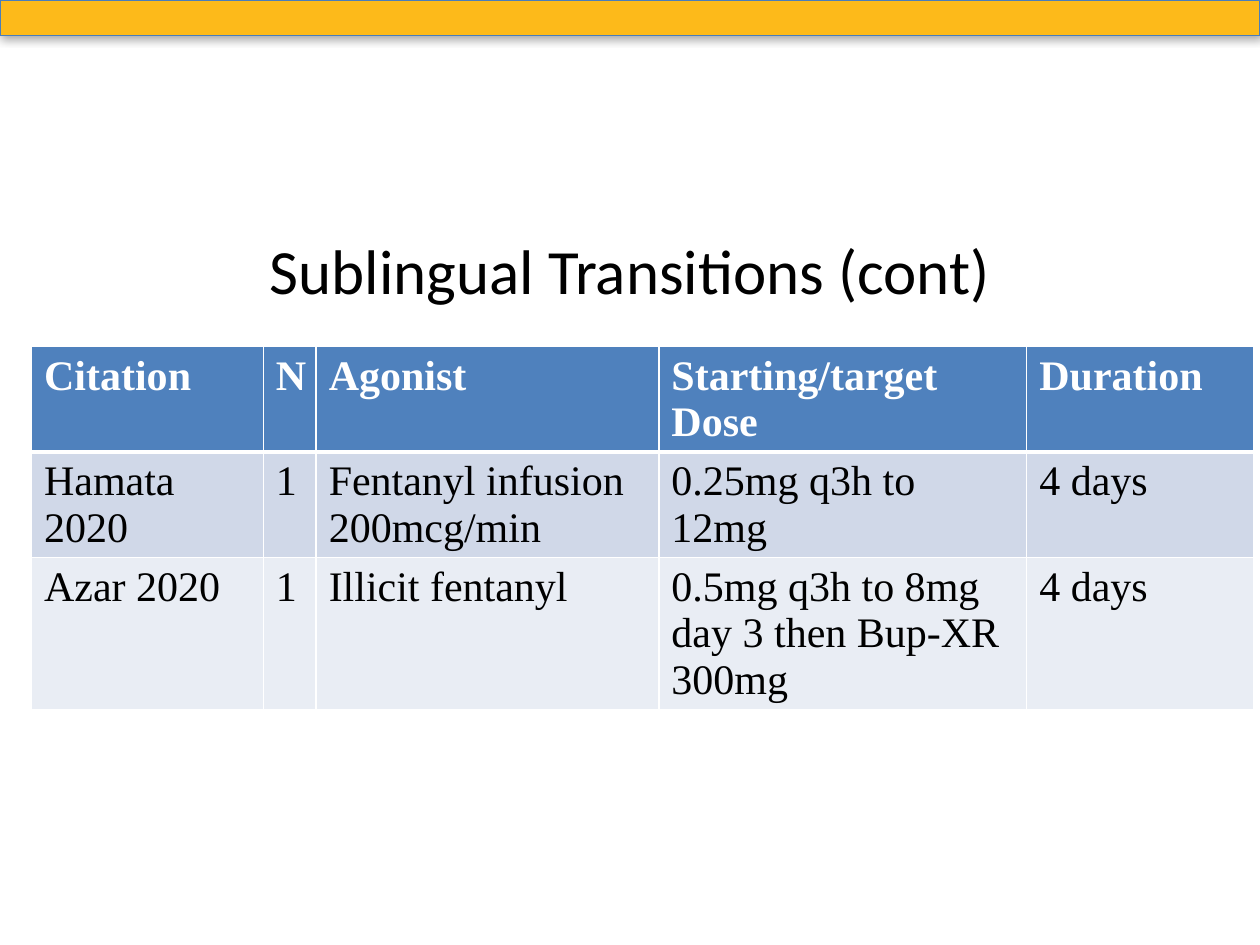
from dataclasses import dataclass

import pptx
import pptx.dml.color
import pptx.enum.shapes
import pptx.enum.text
import pptx.oxml
import pptx.oxml.ns
import pptx.util
from pptx.util import Inches


def rgb(value):
    return pptx.dml.color.RGBColor.from_string(value)


@dataclass(frozen=True)
class Theme:
    band: str = "FDBA1A"
    band_line: str = "4A7EBB"
    header: str = "4F81BD"
    rows: tuple = ("D0D8E8", "E9EDF4")
    light: str = "FFFFFF"
    dark: str = "000000"
    title_font: str = "Calibri"
    table_font: str = "Times New Roman"
    title_size: int = 36
    table_size: int = 24


THEME = Theme()
NAMESPACE = pptx.oxml.ns.nsdecls("a")

COLUMN_WIDTHS = (1.84, 0.42, 2.72, 2.92, 1.8)
ROW_HEIGHT = 0.41  # minimum; rows grow with their text
TABLE_ROWS = (
    ("Citation", "N", "Agonist", "Starting/target Dose", "Duration"),
    ("Hamata 2020", "1", "Fentanyl infusion 200mcg/min", "0.25mg q3h to 12mg", "4 days"),
    ("Azar 2020", "1", "Illicit fentanyl", "0.5mg q3h to 8mg day 3 then Bup-XR 300mg", "4 days"),
)


def style_text(para, font_name, size, color, bold=False):
    for span in para.runs:
        span.font.name = font_name
        span.font.size = pptx.util.Pt(size)
        span.font.color.rgb = rgb(color)
        span.font.bold = bold


def add_band(page, left, top, width, height):
    """Coloured strip with a soft shadow below it."""
    band = page.shapes.add_shape(
        pptx.enum.shapes.MSO_SHAPE.RECTANGLE, left, top, width, height)
    band.fill.solid()
    band.fill.fore_color.rgb = rgb(THEME.band)
    band.line.color.rgb = rgb(THEME.band_line)
    band.line.width = pptx.util.Pt(0.75)
    band.shadow.inherit = False
    effects = band._element.spPr.find(pptx.oxml.ns.qn("a:effectLst"))
    effects.append(pptx.oxml.parse_xml(
        f'<a:outerShdw {NAMESPACE} blurRad="{pptx.util.Pt(5)}" dist="{pptx.util.Pt(1.8)}" '
        f'dir="5400000" rotWithShape="0"><a:srgbClr val="{THEME.dark}">'
        '<a:alpha val="35000"/></a:srgbClr></a:outerShdw>'))


def add_title(page, text, left, top, width, height):
    box = page.shapes.add_textbox(left, top, width, height)
    frame = box.text_frame
    frame.word_wrap = True
    frame.vertical_anchor = pptx.enum.text.MSO_ANCHOR.MIDDLE
    frame.text = text
    para = frame.paragraphs[0]
    para.alignment = pptx.enum.text.PP_ALIGN.CENTER
    style_text(para, THEME.title_font, THEME.title_size, THEME.dark)


def add_borders(cell, bottom_width, top_width):
    properties = cell._tc.get_or_add_tcPr()
    widths = {"L": 1, "R": 1, "T": top_width, "B": bottom_width}
    for side, width in widths.items():
        properties.append(pptx.oxml.parse_xml(
            f'<a:ln{side} {NAMESPACE} w="{pptx.util.Pt(width)}"><a:solidFill>'
            f'<a:srgbClr val="{THEME.light}"/></a:solidFill></a:ln{side}>'))


def add_study_table(page, left, top, width, height):
    table = page.shapes.add_table(
        len(TABLE_ROWS), len(COLUMN_WIDTHS), left, top, width, height).table
    for column, column_width in zip(table.columns, COLUMN_WIDTHS):
        column.width = Inches(column_width)
    for row_index, texts in enumerate(TABLE_ROWS):
        is_header = row_index == 0
        fill = THEME.header if is_header else THEME.rows[(row_index - 1) % 2]
        for column_index, text in enumerate(texts):
            cell = table.cell(row_index, column_index)
            # The rule under the header is heavier than the grid
            add_borders(cell, 3 if is_header else 1, 3 if row_index == 1 else 1)
            cell.fill.solid()
            cell.fill.fore_color.rgb = rgb(fill)
            cell.text_frame.text = text
            style_text(cell.text_frame.paragraphs[0], THEME.table_font, THEME.table_size,
                       THEME.light if is_header else THEME.dark, is_header)


def main():
    deck = pptx.Presentation()
    deck.slide_width, deck.slide_height = Inches(10), Inches(7.5)
    page = deck.slides.add_slide(deck.slide_layouts[6])

    add_band(page, 0, 0, deck.slide_width, Inches(0.28))
    add_study_table(page, Inches(0.25), Inches(2.75), Inches(sum(COLUMN_WIDTHS)),
                    Inches(ROW_HEIGHT * len(TABLE_ROWS)))
    add_title(page, "Sublingual Transitions (cont)",
              Inches(0.5), Inches(1.58), Inches(9), Inches(1.11))
    deck.save("out.pptx")


if __name__ == "__main__":
    main()
